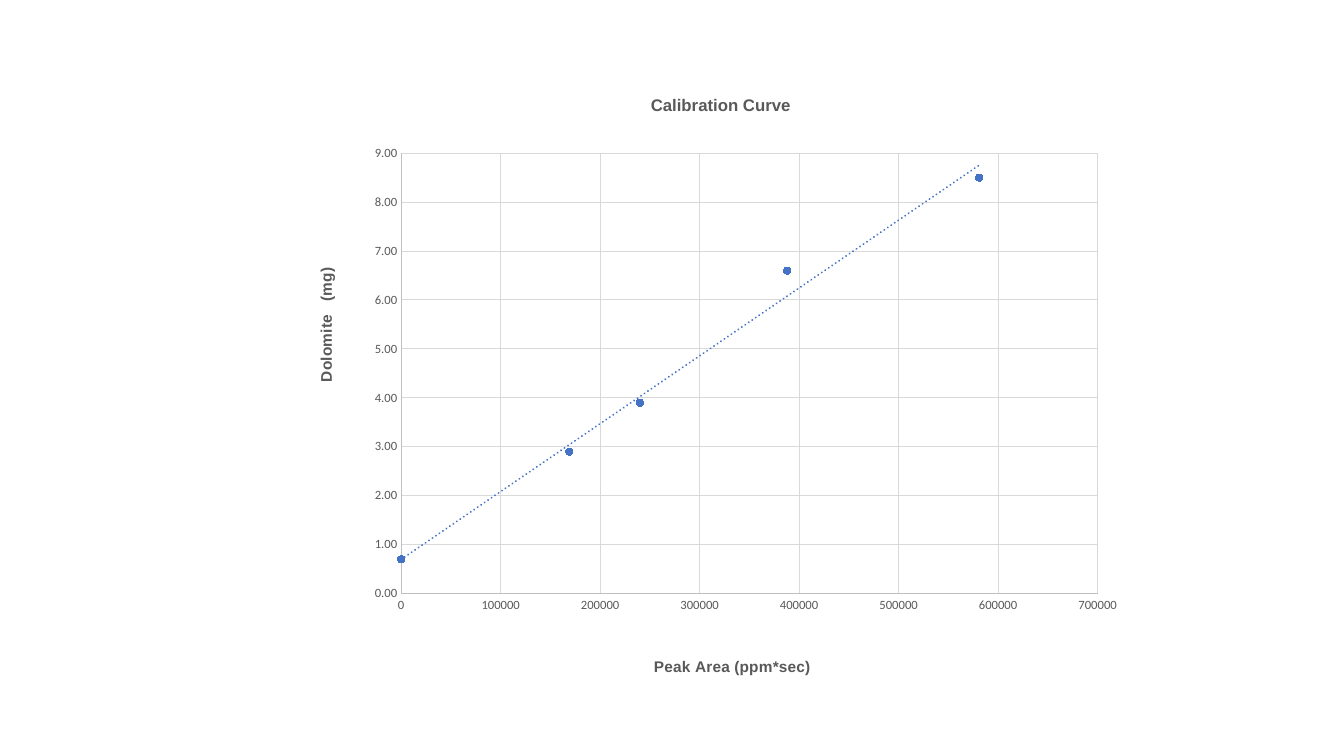
from lxml import etree
from pptx import Presentation
from pptx.chart.data import XyChartData
from pptx.dml.color import RGBColor
from pptx.enum.chart import XL_CHART_TYPE, XL_MARKER_STYLE, XL_TICK_MARK
from pptx.oxml import parse_xml
from pptx.oxml.ns import nsdecls, qn
from pptx.util import Inches, Pt

BLUE = RGBColor(0x44, 0x72, 0xC4)
TEXT_GRAY = RGBColor(0x59, 0x59, 0x59)
AXIS_GRAY = RGBColor(0xBF, 0xBF, 0xBF)
GRID_GRAY = RGBColor(0xD9, 0xD9, 0xD9)

# Peak area (ppm*sec), dolomite (mg)
CALIBRATION_POINTS = [(0, 0.7), (169000, 2.9), (240000, 3.9), (388000, 6.6), (581000, 8.5)]


def set_layout(element, index, inner=False, **fractions):
    """Place a chart part by fractions of the chart's box."""
    for old_layout in element.findall(qn("c:layout")):
        element.remove(old_layout)
    layout = parse_xml(f"<c:layout {nsdecls('c')}><c:manualLayout/></c:layout>")
    settings = {"layoutTarget": "inner"} if inner else {}
    settings.update({"xMode": "edge", "yMode": "edge"}, **fractions)
    for name, value in settings.items():
        etree.SubElement(layout[0], qn(f"c:{name}")).set("val", str(value))
    element.insert(index, layout)


def write_title(title, text, size):
    paragraph = title.text_frame.paragraphs[0]
    run = paragraph.add_run()
    run.text = text
    run.font.name = "Arial"
    run.font.size = Pt(size)
    run.font.bold = True
    run.font.color.rgb = TEXT_GRAY


def format_line(line, color):
    line.color.rgb = color
    line.width = Pt(0.75)


def format_axis(axis, title, maximum, step, number_format, x, y):
    axis.minimum_scale, axis.maximum_scale = 0, maximum
    axis.major_unit = step
    axis.major_tick_mark = axis.minor_tick_mark = XL_TICK_MARK.NONE
    axis.has_major_gridlines = True
    format_line(axis.major_gridlines.format.line, GRID_GRAY)
    format_line(axis.format.line, AXIS_GRAY)
    labels = axis.tick_labels
    labels.number_format = number_format
    labels.number_format_is_linked = False
    labels.font.name = "Calibri"
    labels.font.size = Pt(9)
    labels.font.color.rgb = TEXT_GRAY
    write_title(axis.axis_title, title, 11)
    set_layout(axis.axis_title._element, 1, x=x, y=y)


def format_series(series):
    series.format.line.fill.background()
    series.marker.style = XL_MARKER_STYLE.CIRCLE
    series.marker.size = 5
    series.marker.format.fill.solid()
    series.marker.format.fill.fore_color.rgb = BLUE
    series.marker.format.line.color.rgb = BLUE
    # Dotted linear trend line
    trendline = parse_xml(
        f"<c:trendline {nsdecls('c', 'a')}><c:spPr>"
        f'<a:ln w="{Pt(1.5)}" cap="rnd"><a:solidFill><a:srgbClr val="{BLUE}"/></a:solidFill>'
        '<a:prstDash val="sysDot"/></a:ln></c:spPr><c:trendlineType val="linear"/>'
        '<c:dispRSqr val="0"/><c:dispEq val="0"/></c:trendline>'
    )
    series._element.find(qn("c:xVal")).addprevious(trendline)


def add_calibration_chart(slide, left, top, width, height):
    data = XyChartData()
    points = data.add_series("Series 1")
    for area, dolomite in CALIBRATION_POINTS:
        points.add_data_point(area, dolomite)
    chart = slide.shapes.add_chart(
        XL_CHART_TYPE.XY_SCATTER, left, top, width, height, data
    ).chart
    chart.has_legend = False
    chart.font.name = "Calibri"
    chart.font.size = Pt(10)

    # Title and plot area
    chart.has_title = True
    write_title(chart.chart_title, "Calibration Curve", 12)
    set_layout(chart.chart_title._element, 1, x=0.42, y=0.034)
    plot_area = chart._chartSpace.chart.plotArea
    set_layout(plot_area, 0, inner=True, x=0.139, y=0.131, w=0.794, h=0.698)

    # Axes
    format_axis(chart.category_axis, "Peak Area (ppm*sec)", 700000, 100000, "General", 0.424, 0.923)
    format_axis(chart.value_axis, " Dolomite   (mg)", 9, 1, "0.00", 0.038, 0.308)
    body = chart.value_axis.axis_title.text_frame._txBody.bodyPr
    body.set("rot", "-5400000")
    body.set("vert", "horz")

    chart.plots[0].vary_by_categories = False
    series = chart.plots[0].series[0]
    series.smooth = False
    format_series(series)


def main():
    presentation = Presentation()
    presentation.slide_width = Inches(13.33)
    presentation.slide_height = Inches(7.5)
    slide = presentation.slides.add_slide(presentation.slide_layouts[6])
    add_calibration_chart(slide, Inches(2.77), Inches(0.7), Inches(8.7), Inches(6.26))
    presentation.save("out.pptx")


if __name__ == "__main__":
    main()
